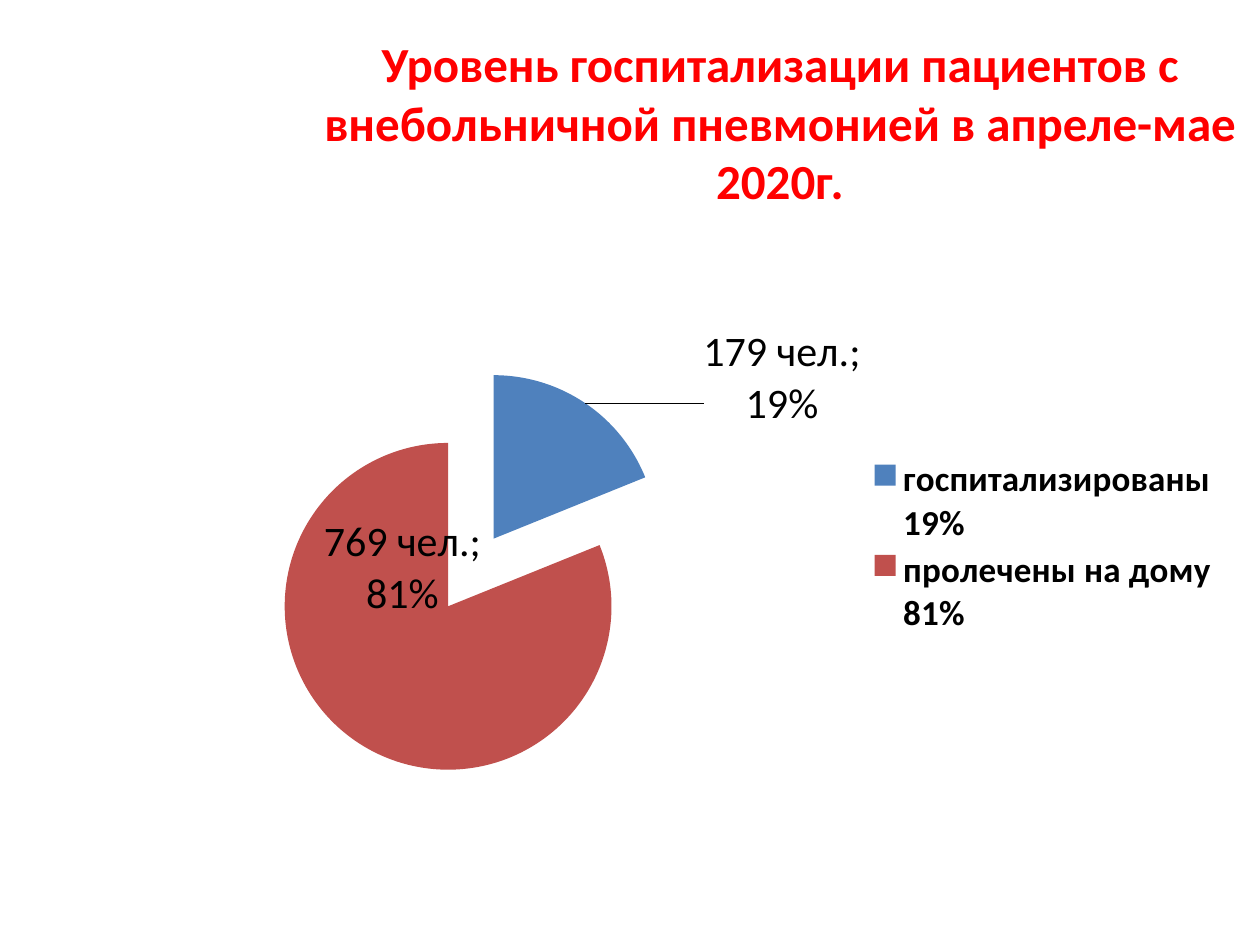
from lxml.etree import SubElement
from pptx import Presentation
from pptx.chart.data import CategoryChartData as Data
from pptx.dml.color import RGBColor as RGB
from pptx.enum.chart import XL_CHART_TYPE as Kind, XL_LABEL_POSITION as Pos
from pptx.enum.chart import XL_LEGEND_POSITION as Side
from pptx.enum.text import MSO_ANCHOR as Anchor, PP_ALIGN as Align
from pptx.oxml.ns import qn
from pptx.util import Inches, Pt

TITLE = "Уровень госпитализации пациентов с внебольничной пневмонией в апреле-мае 2020г."
PARTS = [
    ("госпитализированы 19%", 179, "179 чел.; 19%", "blue", (0.21, -0.14)),
    ("пролечены на дому 81%", 769, "769 чел.; 81%", "brick", (0, -0.16)),
]
COLORS = {"red": "FF0000", "blue": "4F81BD", "brick": "C0504D", "black": "000000"}
FACE = "Calibri"


def style(font, size, color, bold=False):
    font.name, font.size, font.bold = FACE, Pt(size), bold
    font.color.rgb = RGB.from_string(COLORS[color])


def place(prior, **items):
    for old in prior.getparent().findall(qn("c:layout")):
        old.getparent().remove(old)
    box = SubElement(prior.getparent(), qn("c:layout"))
    prior.addnext(box)
    grid = SubElement(box, qn("c:manualLayout"))
    for tag, val in items.items():
        SubElement(grid, qn("c:" + tag), val=str(val))


def add_title(slide):
    title = slide.shapes.title
    title.left, title.top, title.width, title.height = map(Inches, (2.38, 0.26, 7.62, 1.41))
    frame = title.text_frame
    frame.word_wrap, frame.vertical_anchor = True, Anchor.MIDDLE
    para = frame.paragraphs[0]
    para.alignment = Align.CENTER
    run = para.add_run()
    run.text = TITLE
    style(run.font, 28, "red", True)


def add_pie(slide):
    data = Data()
    data.categories = [part[0] for part in PARTS]
    data.add_series("Series 1", [part[1] for part in PARTS])
    spot = map(Inches, (0.62, 1.72, 9.17, 5.23))
    chart = slide.shapes.add_chart(Kind.PIE_EXPLODED, *spot, data).chart
    chart.has_title = False
    style(chart.font, 10, "black")
    chart.has_legend = True
    legend = chart.legend
    legend.position, legend.include_in_layout = Side.RIGHT, False
    style(legend.font, 20, "black", True)
    root = chart.element
    place(root.find(".//" + qn("c:legendPos")), xMode="edge", yMode="edge",
          x=0.68, y=0.36, w=0.31, h=0.28)

    plot = chart.plots[0]
    plot.vary_by_categories = True
    area = root.find(".//" + qn("c:plotArea"))
    mark = SubElement(area, qn("c:mark"))
    area.insert(0, mark)
    place(mark, layoutTarget="inner", xMode="edge", yMode="edge",
          x=0.03, y=0.23, w=0.62, h=0.62)
    area.remove(mark)

    series = plot.series[0]
    root.find(".//" + qn("c:explosion")).set("val", "25")
    labels = series.data_labels
    labels.show_value = True
    style(labels.font, 24, "black")
    for i, (_, _, text, color, (dx, dy)) in enumerate(PARTS):
        point = series.points[i]
        point.format.fill.solid()
        point.format.fill.fore_color.rgb = RGB.from_string(COLORS[color])
        label = point.data_label
        run = label.text_frame.paragraphs[0].add_run()
        run.text = text
        style(run.font, 24, "black")
        label.position = Pos.CENTER
        node = root.findall(".//" + qn("c:dLbl"))[i]
        place(node.find(qn("c:idx")), x=dx, y=dy)


def main():
    """Build the slide on pneumonia admissions."""
    deck = Presentation()
    deck.slide_width, deck.slide_height = Inches(10), Inches(7.5)
    slide = deck.slides.add_slide(deck.slide_layouts[5])
    add_title(slide)
    add_pie(slide)
    deck.save("out.pptx")


if __name__ == "__main__":
    main()
